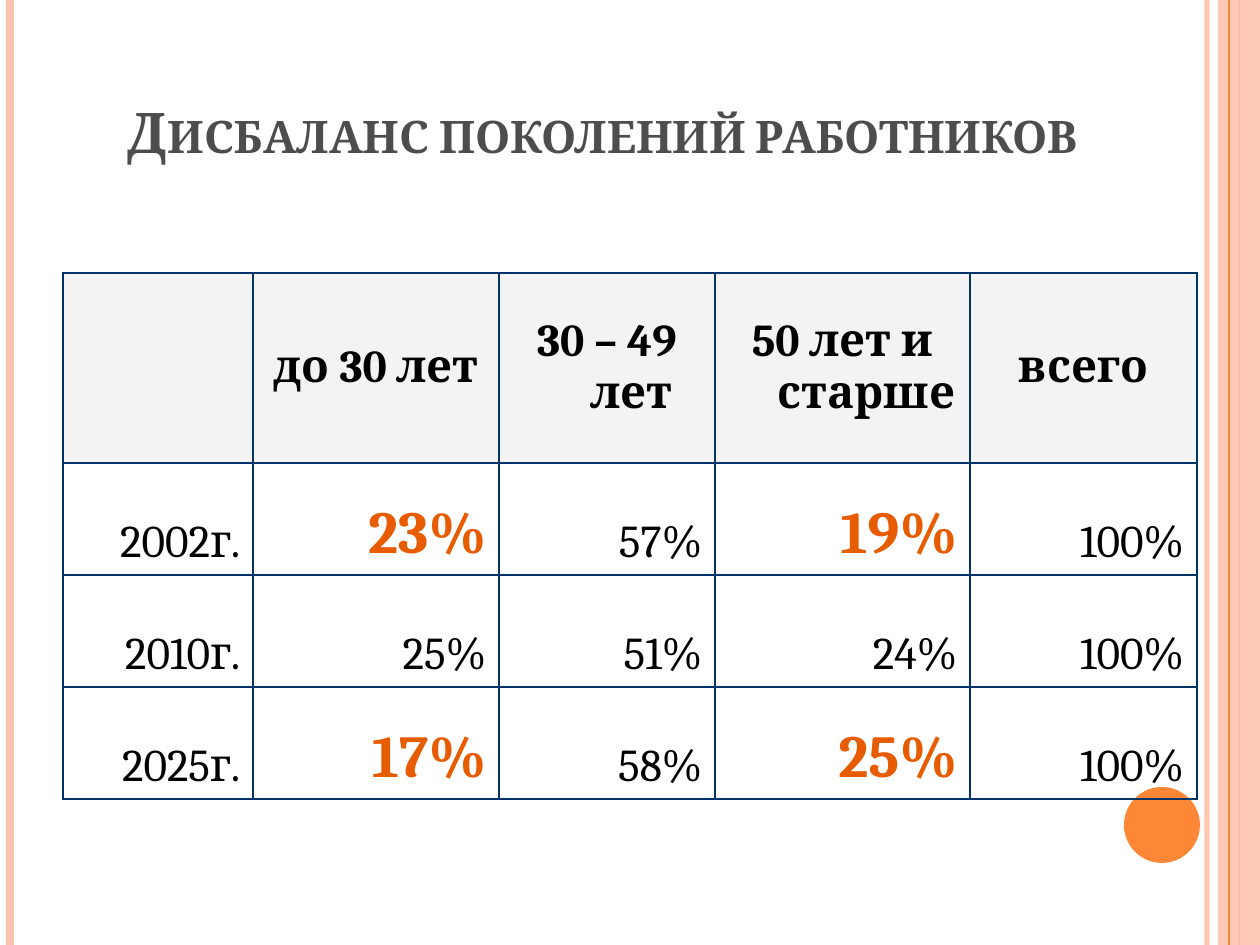
from dataclasses import dataclass

from lxml import etree
from pptx import Presentation
from pptx import util as u
from pptx.dml.color import RGBColor
from pptx.enum import shapes, text
from pptx.oxml import ns

TITLE = "Дисбаланс поколений работников"
ROWS = [
    ["", "до 30 лет", "30 – 49 лет", "50 лет и старше", "всего"],
    ["2002г.", "23%", "57%", "19%", "100%"],
    ["2010г.", "25%", "51%", "24%", "100%"],
    ["2025г.", "17%", "58%", "25%", "100%"],
]
HIGHLIGHTS = {(1, 1), (1, 3), (3, 1), (3, 3)}
COLUMN_WIDTHS = [190, 246, 216, 255, 227]
ROW_HEIGHTS = [190, 112, 112, 112]
TABLE_LEFT, TABLE_TOP = 63, 273
WIDTH, HEIGHT = 1260, 945
INDENT = 48


@dataclass(frozen=True)
class Theme:
    font: str = "Cambria"
    title: str = "4D4D4D"
    ink: str = "000000"
    accent: str = "E75C01"
    orange: str = "FE8637"
    peach: str = "FEC3AE"
    header: str = "F3F3F3"
    border: str = "003366"
    title_size: int = 32
    cell_size: int = 26
    accent_size: int = 34
    border_width: int = 1


THEME = Theme()
OUTER_STRIPES = [(1207, THEME.peach, 3, 93), (10, THEME.peach, 4.5, 100),
                 (1239, THEME.orange, 1.5, 100)]
INNER_STRIPES = [(1229, THEME.orange, 0.75, 100)]


def px(value):
    return u.Emu(round(value * 914400 / 126))


def color(value):
    return RGBColor.from_string(value)


def add_run(paragraph, words, size, ink, bold):
    run = paragraph.add_run()
    run.text = words
    run.font.name = THEME.font
    run.font.size = u.Pt(size)
    run.font.bold = bold
    run.font.color.rgb = color(ink)
    return run


def set_opacity(shape, percent):
    tint = next(shape._element.spPr.iter(ns.qn("a:srgbClr")))
    etree.SubElement(tint, ns.qn("a:alpha"), val=str(percent * 1000))


def add_stripes(slide, stripes):
    for x, ink, width, opacity in stripes:
        line = slide.shapes.add_connector(
            shapes.MSO_CONNECTOR.STRAIGHT, px(x), 0, px(x), px(HEIGHT))
        line.line.color.rgb = color(ink)
        line.line.width = u.Pt(width)
        set_opacity(line, opacity)
        etree.SubElement(line._element.spPr, ns.qn("a:effectLst"))


def add_solid(slide, kind, box, ink):
    shape = slide.shapes.add_shape(kind, *map(px, box))
    shape.shadow.inherit = False
    shape.fill.solid()
    shape.fill.fore_color.rgb = color(ink)
    shape.line.fill.background()
    return shape


def set_borders(cell):
    properties = cell._tc.get_or_add_tcPr()
    for side in ("a:lnL", "a:lnR", "a:lnT", "a:lnB"):
        line = etree.SubElement(properties, ns.qn(side), w=str(u.Pt(THEME.border_width)))
        fill = etree.SubElement(line, ns.qn("a:solidFill"))
        etree.SubElement(fill, ns.qn("a:srgbClr"), val=THEME.border)


def fill_cell(cell, words, header, highlight):
    set_borders(cell)
    if header:
        cell.fill.solid()
        cell.fill.fore_color.rgb = color(THEME.header)
    else:
        cell.fill.background()
    cell.vertical_anchor = text.MSO_ANCHOR.MIDDLE if header else text.MSO_ANCHOR.BOTTOM
    if not words:
        return
    paragraph = cell.text_frame.paragraphs[0]
    paragraph.alignment = text.PP_ALIGN.CENTER if header else text.PP_ALIGN.RIGHT
    properties = paragraph._p.get_or_add_pPr()
    properties.set("marL", str(px(INDENT)))
    properties.set("indent", str(-px(INDENT)))
    add_run(paragraph, words,
            THEME.accent_size if highlight else THEME.cell_size,
            THEME.accent if highlight else THEME.ink,
            header or highlight)


def add_generations_table(slide):
    table = slide.shapes.add_table(
        len(ROWS), len(COLUMN_WIDTHS), px(TABLE_LEFT), px(TABLE_TOP),
        px(sum(COLUMN_WIDTHS)), px(sum(ROW_HEIGHTS))).table
    table.first_row = table.horz_banding = False
    for column, width in zip(table.columns, COLUMN_WIDTHS):
        column.width = px(width)
    for r, (row, height) in enumerate(zip(ROWS, ROW_HEIGHTS)):
        table.rows[r].height = px(height)
        for c, words in enumerate(row):
            fill_cell(table.cell(r, c), words, r == 0, (r, c) in HIGHLIGHTS)


def format_title(title):
    title.left, title.top, title.width, title.height = map(px, (0, 66, 1206, 105))
    title.text_frame.vertical_anchor = text.MSO_ANCHOR.BOTTOM
    paragraph = title.text_frame.paragraphs[0]
    paragraph.alignment = text.PP_ALIGN.CENTER
    run = add_run(paragraph, TITLE, THEME.title_size, THEME.title, True)
    run.font._element.set("cap", "small")


def main():
    presentation = Presentation()
    presentation.slide_width, presentation.slide_height = px(WIDTH), px(HEIGHT)
    slide = presentation.slides.add_slide(presentation.slide_layouts[5])
    format_title(slide.shapes.title)
    add_stripes(slide, OUTER_STRIPES)
    band = add_solid(slide, shapes.MSO_SHAPE.RECTANGLE, (1218, 0, 42, HEIGHT), THEME.peach)
    set_opacity(band, 87)
    add_stripes(slide, INNER_STRIPES)
    add_solid(slide, shapes.MSO_SHAPE.OVAL, (1124, 787, 76, 76), THEME.orange)
    add_generations_table(slide)
    presentation.save("out.pptx")


if __name__ == "__main__":
    main()
